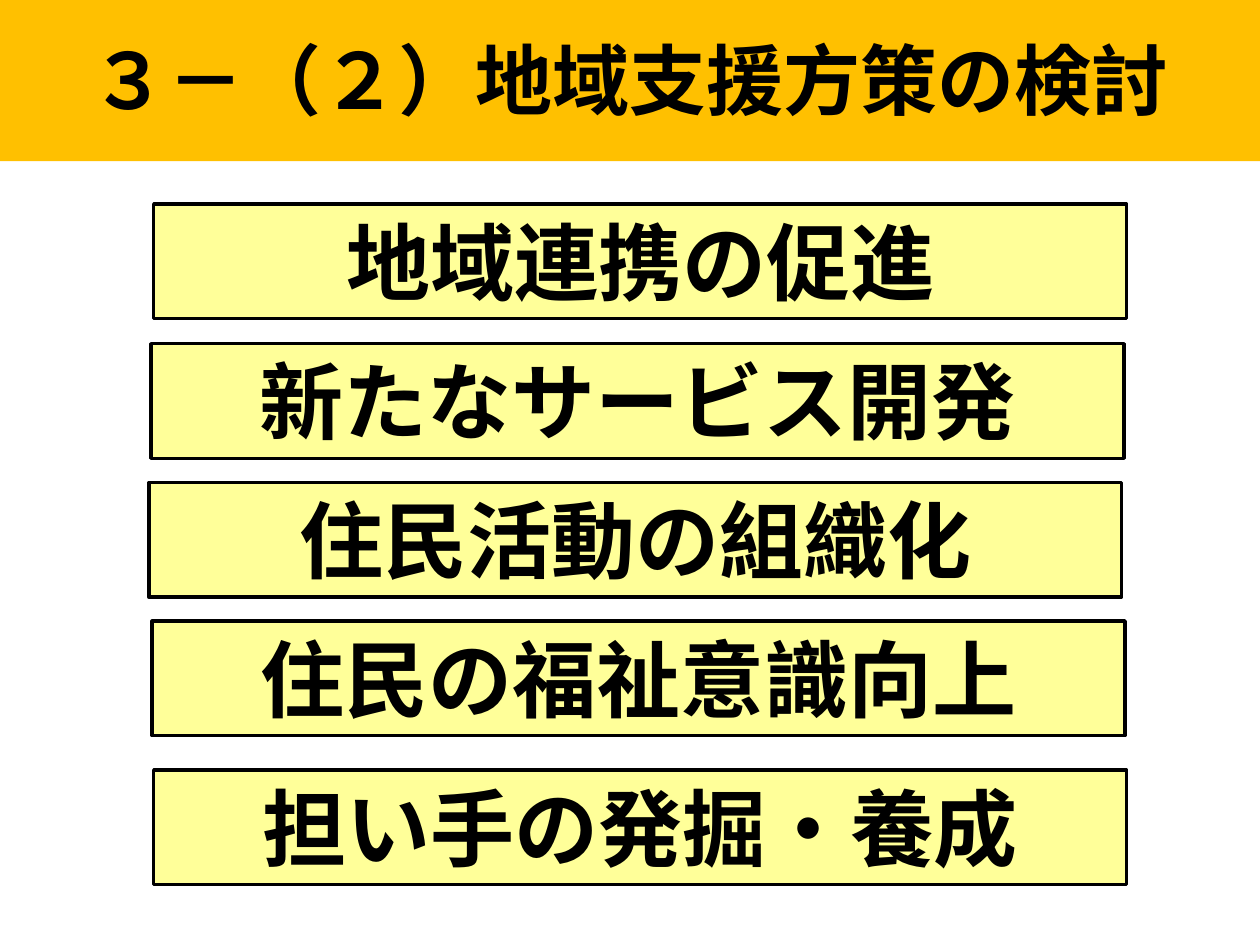
import pptx
import pptx.util
import pptx.dml.color
import pptx.enum.shapes
import pptx.enum.text
from pptx.util import Cm, Pt

TITLE = "３－（２）地域支援方策の検討"
# text, left and top in cm
BARS = [
    ("地域連携の促進", 3.1, 4.11),
    ("新たなサービス開発", 3.05, 6.93),
    ("住民活動の組織化", 3.0, 9.73),
    ("住民の福祉意識向上", 3.07, 12.52),
    ("担い手の発掘・養成", 3.1, 15.52),
]
BAR_W, BAR_H = 19.61, 2.31

ANCHOR = pptx.enum.text.MSO_ANCHOR
FIT = pptx.enum.text.MSO_AUTO_SIZE
TITLE_FONT = {"name": "Calibri", "size": Pt(44), "bold": True}
BAR_FONT = {"name": "Arial", "size": Pt(48), "bold": True}
TITLE_FRAME = {"word_wrap": True, "auto_size": FIT.NONE,
               "vertical_anchor": ANCHOR.MIDDLE}
BAR_FRAME = {"word_wrap": True, "auto_size": FIT.SHAPE_TO_FIT_TEXT,
             "vertical_anchor": ANCHOR.TOP}


def paint(form, color):
    """Give a fill or a font colour a solid hex colour."""
    form.solid()
    form.fore_color.rgb = pptx.dml.color.RGBColor.from_string(color)


def apply(item, values):
    for key, value in values.items():
        setattr(item, key, value)


def write(shape, text, font, frame):
    """Put one centred line of black text in a shape."""
    body = shape.text_frame
    apply(body, frame)
    line = body.paragraphs[0]
    line.alignment = pptx.enum.text.PP_ALIGN.CENTER
    run = line.add_run()
    run.text = text
    apply(run.font, font)
    paint(run.font.fill, "000000")


def main():
    deck = pptx.Presentation()
    deck.slide_width, deck.slide_height = Cm(25.4), Cm(19.05)
    slide = deck.slides.add_slide(deck.slide_layouts[5])

    title = slide.shapes.title
    apply(title, {"left": 0, "top": Cm(-0.08),
                  "width": deck.slide_width, "height": Cm(3.33)})
    paint(title.fill, "FFC000")
    write(title, TITLE, TITLE_FONT, TITLE_FRAME)

    for text, left, top in BARS:
        bar = slide.shapes.add_shape(
            pptx.enum.shapes.MSO_SHAPE.RECTANGLE,
            Cm(left), Cm(top), Cm(BAR_W), Cm(BAR_H))
        bar.shadow.inherit = False
        paint(bar.fill, "FFFF99")
        paint(bar.line.fill, "000000")
        bar.line.width = Pt(2)
        write(bar, text, BAR_FONT, BAR_FRAME)

    deck.save("out.pptx")


if __name__ == "__main__":
    main()
